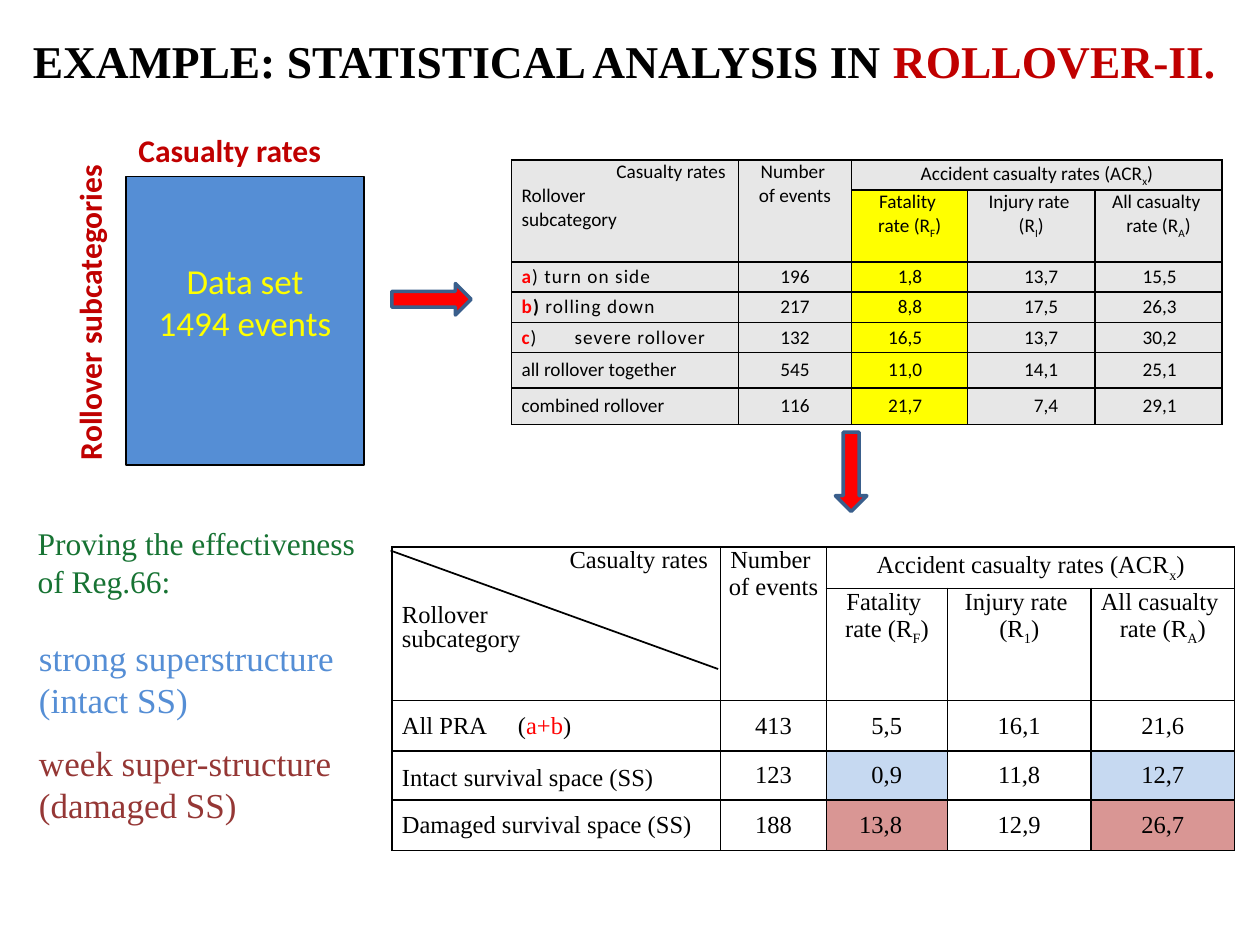
from lxml import etree
from pptx import Presentation
from pptx.dml.color import RGBColor
from pptx.enum import shapes, text
from pptx.oxml.ns import qn
from pptx.util import Inches, Pt

BLACK = RGBColor(0x00, 0x00, 0x00)
DARK_RED = RGBColor(0xC0, 0x00, 0x00)
RED = RGBColor(0xFF, 0x00, 0x00)
YELLOW = RGBColor(0xFF, 0xFF, 0x00)
GREY = RGBColor(0xE7, 0xE7, 0xE7)
BLUE = RGBColor(0x55, 0x8E, 0xD5)
ARROW_EDGE = RGBColor(0x3A, 0x5F, 0x8C)
PALE_BLUE = RGBColor(0xC6, 0xD9, 0xF1)
PALE_RED = RGBColor(0xD9, 0x96, 0x94)
BROWN = RGBColor(0x95, 0x37, 0x35)
GREEN = RGBColor(0x17, 0x73, 0x33)
SERIF, SANS = "Times New Roman", "Calibri"
LEFT, CENTER, RIGHT = text.PP_ALIGN.LEFT, text.PP_ALIGN.CENTER, text.PP_ALIGN.RIGHT


def add_text(paragraph, words, size=14, font=SERIF, color=BLACK, bold=False, base=0, spacing=0):
    """Append words to a paragraph in one format, breaking lines at newlines."""
    for number, line in enumerate(words.split("\n")):
        if number:
            paragraph.add_line_break()
        run = paragraph.add_run()
        run.text = line
        run.font.size, run.font.name, run.font.bold = Pt(size), font, bold
        run.font.color.rgb = color
        if base:
            run.font._element.set("baseline", str(base * 1000))
        if spacing:
            run.font._element.set("spc", str(int(spacing * 100)))


def add_paragraph(frame, pieces, align=LEFT, first=True, indent=0, right=0, tab=None, **style):
    """Fill a paragraph with pieces, each a string or a (string, format) pair."""
    paragraph = frame.paragraphs[0] if first else frame.add_paragraph()
    properties = paragraph._p.get_or_add_pPr()
    properties.set("marL", "0")
    properties.set("marR", str(Inches(right)))
    properties.set("indent", str(Inches(indent)))
    if tab:
        stops = etree.SubElement(properties, qn("a:tabLst"))
        etree.SubElement(stops, qn("a:tab"), pos=str(Inches(tab)), algn="l")
    paragraph.alignment = align
    for piece in [pieces] if isinstance(pieces, str) else pieces:
        words, extra = (piece, {}) if isinstance(piece, str) else piece
        add_text(paragraph, words, **{**style, **extra})
    return paragraph


def add_label(slide, box, lines, top=0.05, left=0.1, vertical=False, gap=0, **style):
    """Place a text box with one paragraph for each (words, colour) line."""
    frame = slide.shapes.add_textbox(*map(Inches, box)).text_frame
    frame.word_wrap = True
    frame.margin_top, frame.margin_left = Inches(top), Inches(left)
    if vertical:
        frame._txBody.bodyPr.set("vert", "vert270")
    for number, (words, color) in enumerate(lines):
        paragraph = add_paragraph(frame, words, first=not number, color=color, **style)
        if number:
            paragraph.space_before = Pt(gap)


def add_title(slide, box):
    """Format the title placeholder."""
    title = slide.shapes.title
    title.left, title.top, title.width, title.height = map(Inches, box)
    title.text_frame.auto_size = text.MSO_AUTO_SIZE.NONE
    title.text_frame.vertical_anchor = text.MSO_ANCHOR.MIDDLE
    add_paragraph(title.text_frame, ["EXAMPLE: STATISTICAL ANALYSIS IN ",
                                     ("ROLLOVER-II. ", {"color": DARK_RED})],
                  CENTER, size=26, bold=True)


def add_block(slide, kind, box, fill, edge, width):
    """Place a filled and outlined preset shape."""
    block = slide.shapes.add_shape(kind, *map(Inches, box))
    block.shadow.inherit = False
    block.fill.solid()
    block.fill.fore_color.rgb = fill
    block.line.color.rgb, block.line.width = edge, Pt(width)
    return block


def add_arrow(slide, box, rotation=0):
    """Place a red block arrow."""
    arrow = add_block(slide, shapes.MSO_SHAPE.RIGHT_ARROW, box, RED, ARROW_EDGE, 2)
    arrow.rotation = rotation


def add_data_set(slide, box):
    """Draw the data set block with its two axis labels."""
    left, top, width, height = box
    frame = add_block(slide, shapes.MSO_SHAPE.RECTANGLE, box, BLUE, BLACK, 0.75).text_frame
    frame.word_wrap = True
    frame.vertical_anchor = text.MSO_ANCHOR.TOP
    frame.margin_top = Inches(0.66)
    for number, words in enumerate(["Data set", "1494 events"]):
        add_paragraph(frame, words, CENTER, first=not number, size=20, font=SANS, color=YELLOW)
    axis = {"size": 18, "font": SANS, "bold": True}
    add_label(slide, (left, top - 0.41, width, 0.4), [("Casualty rates", DARK_RED)], **axis)
    add_label(slide, (left - 0.49, top - 0.41, 0.5, height + 0.47),
              [("Rollover subcategories", DARK_RED)], vertical=True, **axis)


def format_cell(cell, fill=None, anchor=text.MSO_ANCHOR.MIDDLE):
    """Give a cell black borders, no insets and its fill."""
    for side in ("lnL", "lnR", "lnT", "lnB"):
        border = etree.SubElement(cell._tc.get_or_add_tcPr(), qn("a:" + side), w=str(Pt(1)))
        paint = etree.SubElement(border, qn("a:solidFill"))
        etree.SubElement(paint, qn("a:srgbClr"), val=str(BLACK))
    cell.margin_left = cell.margin_right = cell.margin_top = cell.margin_bottom = 0
    cell.vertical_anchor = anchor
    if fill is None:
        cell.fill.background()
    else:
        cell.fill.solid()
        cell.fill.fore_color.rgb = fill


def add_rates_table(slide, box, widths, heights, rows, fills, injury, number_formats, **style):
    """Build a casualty table: shared two-row header, then label and number rows."""
    graphic = slide.shapes.add_table(len(heights), len(widths), *map(Inches, box))
    table = graphic.table
    table.first_row = table.horz_banding = False
    for column, width in zip(table.columns, widths):
        column.width = Inches(width)
    for row, height in zip(table.rows, heights):
        row.height = Inches(height)
    for r in range(len(heights)):
        for c in range(len(widths)):
            middle = r > 1 or (r == 0 and c > 1)
            format_cell(table.cell(r, c), fills(r, c),
                        text.MSO_ANCHOR.MIDDLE if middle else text.MSO_ANCHOR.TOP)
    for start, end in [((0, 0), (1, 0)), ((0, 1), (1, 1)), ((0, 2), (0, 4))]:
        table.cell(*start).merge(table.cell(*end))

    corner = table.cell(0, 0).text_frame
    add_paragraph(corner, "Casualty rates", RIGHT, right=0.1, **style)
    for words in ("Rollover", "subcategory"):
        add_paragraph(corner, words, first=False, indent=0.08, **style)
    headers = {(0, 1): ("Number \nof events",),
               (0, 2): ("Accident casualty rates (ACR", "x"),
               (1, 2): ("Fatality \nrate (R", "F"),
               (1, 3): ("Injury rate \n(R", injury),
               (1, 4): ("All casualty \nrate (R", "A")}
    for place, (words, *index) in headers.items():
        pieces = [words] + [piece for i in index for piece in ((i, {"base": -25}), ")")]
        add_paragraph(table.cell(*place).text_frame, pieces, CENTER, **style)

    for r, (label, tab, *numbers) in enumerate(rows, 2):
        add_paragraph(table.cell(r, 0).text_frame, label, indent=0.08, tab=tab, **style)
        for c, number in enumerate(numbers, 1):
            align, right = number_formats[c - 1]
            add_paragraph(table.cell(r, c).text_frame, number, align, right=right, **style)
    return table


def add_subcategory_table(slide, box):
    """Build the upper table, by rollover subcategory."""
    mark, spaced = {"color": RED, "bold": True, "spacing": 0.6}, {"spacing": 0.6}
    rows = [([("a", mark), (") turn on side", spaced)], None, "196", "1,8", "13,7", "15,5"),
            ([("b", mark), (") ", {**spaced, "bold": True}), ("rolling down", spaced)], None,
             "217", "8,8", "17,5", "26,3"),
            ([("c", mark), (")\tsevere rollover", spaced)], 0.31, "132", "16,5", "13,7", "30,2"),
            ("all rollover together", None, "545", "11,0", "14,1", "25,1"),
            ("combined rollover", None, "116", "21,7", "7,4", "29,1")]
    add_rates_table(slide, box, [1.8, 0.9, 0.92, 1.01, 1.01],
                    [0.24, 0.57, 0.24, 0.24, 0.24, 0.28, 0.29], rows,
                    lambda r, c: YELLOW if c == 2 and r else GREY, "I",
                    [(CENTER, 0), (RIGHT, 0.36), (RIGHT, 0.29), (RIGHT, 0.36)],
                    size=11, font=SANS)


def add_survival_table(slide, box):
    """Build the lower table, by survival space, with its split corner cell."""
    rows = [(["All PRA\t(", ("a+b", {"color": RED}), ")"], 0.9, "413", "5,5", "16,1", "21,6"),
            ("Intact survival space (SS)", None, "123", "0,9", "11,8", "12,7"),
            ("Damaged survival space (SS)", None, "188", "13,8", "12,9", "26,7")]
    tints = {3: PALE_BLUE, 4: PALE_RED}
    table = add_rates_table(slide, box, [2.61, 0.84, 0.96, 1.14, 1.14],
                            [0.33, 0.89, 0.4, 0.39, 0.4], rows,
                            lambda r, c: tints.get(r) if c in (2, 4) else None, "1",
                            [(CENTER, 0), (RIGHT, 0.36), (CENTER, 0), (CENTER, 0)])
    table.cell(3, 0).margin_top = Inches(0.05)
    rollover, subcategory = table.cell(0, 0).text_frame.paragraphs[1:]
    rollover.line_spacing = subcategory.line_spacing = 0.87
    rollover.space_before = Pt(17.6)
    left, top = box[:2]
    diagonal = slide.shapes.add_connector(
        shapes.MSO_CONNECTOR.STRAIGHT, Inches(left - 0.01), Inches(top + 0.03),
        Inches(left + 2.59), Inches(top + 0.97))
    diagonal.line.color.rgb, diagonal.line.width = BLACK, Pt(1)
    etree.SubElement(diagonal._element.spPr, qn("a:effectLst"))


def main():
    """Build and save the slide."""
    deck = Presentation()
    deck.slide_width, deck.slide_height = Inches(10), Inches(7.5)
    slide = deck.slides.add_slide(deck.slide_layouts[5])
    add_title(slide, (0, 0.13, 10, 0.69))
    add_subcategory_table(slide, (4.06, 1.27, 5.64, 2.1))
    add_data_set(slide, (1, 1.4, 1.89, 2.29))
    add_arrow(slide, (3.11, 2.25, 0.63, 0.25))
    add_survival_table(slide, (3.11, 4.34, 6.69, 2.41))
    add_label(slide, (0.01, 4.83, 3.1, 1.78),
              [("strong superstructure (intact SS)", BLUE),
               ("week super-structure (damaged SS)", BROWN)],
              top=0.22, left=0.3, gap=12, size=20)
    add_arrow(slide, (6.44, 3.62, 0.63, 0.25), rotation=90)
    add_label(slide, (0.2, 4.11, 2.9, 1.01),
              [("Proving the effectiveness of Reg.66:", GREEN)], size=18)
    deck.save("out.pptx")


if __name__ == "__main__":
    main()
